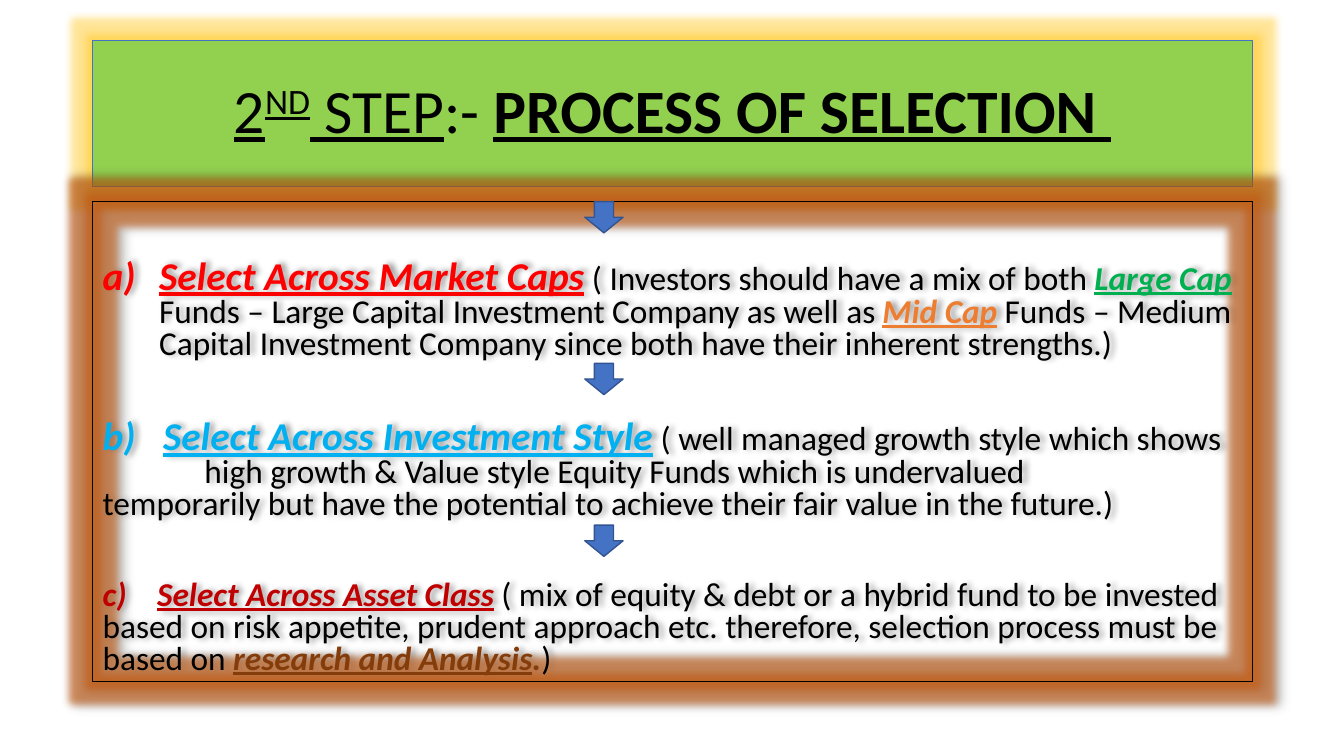
from lxml import etree
from pptx import Presentation
from pptx.dml.color import RGBColor
from pptx.enum.shapes import MSO_SHAPE
from pptx.enum.text import MSO_ANCHOR, PP_ALIGN
from pptx.oxml.ns import qn
from pptx.util import Inches, Pt

RECT, DOWN_ARROW = MSO_SHAPE.RECTANGLE, MSO_SHAPE.DOWN_ARROW
TOP, MIDDLE = MSO_ANCHOR.TOP, MSO_ANCHOR.MIDDLE
LEFT_ALIGN, CENTER = PP_ALIGN.LEFT, PP_ALIGN.CENTER

BLACK = RGBColor(0x00, 0x00, 0x00)
LIME = RGBColor(0x92, 0xD0, 0x50)
BLUE = RGBColor(0x44, 0x72, 0xC4)
NAVY = RGBColor(0x32, 0x54, 0x91)
RED = RGBColor(0xFF, 0x00, 0x00)
GREEN = RGBColor(0x00, 0xB0, 0x50)
ORANGE = RGBColor(0xED, 0x7D, 0x31)
SKY = RGBColor(0x00, 0xB0, 0xF0)
CRIMSON = RGBColor(0xC0, 0x00, 0x00)
BROWN = RGBColor(0x84, 0x3C, 0x0B)
GOLD_GLOW = RGBColor(0xFF, 0xC0, 0x00)
RUST_GLOW = RGBColor(0xC5, 0x5A, 0x11)

FONT = "Calibri"
LARGE, NORMAL = 28.1, 23.8

STEPS = [
    [("Select Across Market Caps", LARGE, RED, True),
     (" ( Investors should have a mix of both ", NORMAL, BLACK, False),
     ("Large Cap", NORMAL, GREEN, True),
     (" Funds – Large Capital Investment Company as well as ", NORMAL, BLACK, False),
     ("Mid Cap", NORMAL, ORANGE, True),
     (" Funds – Medium Capital Investment Company since both have their "
      "inherent strengths.)", NORMAL, BLACK, False)],
    [("b)\t", LARGE, SKY, False),
     ("Select Across Investment Style", LARGE, SKY, True),
     (" ( well managed growth style which shows\v\t\thigh growth & Value style "
      "Equity Funds which is undervalued\vtemporarily but have the potential to "
      "achieve their fair value in the future.)", NORMAL, BLACK, False)],
    [("c)\t", NORMAL, CRIMSON, False),
     ("Select Across Asset Class", NORMAL, CRIMSON, True),
     (" ( mix of equity & debt or a hybrid fund to be invested based on risk "
      "appetite, prudent approach etc. therefore, selection process must be "
      "based on ", NORMAL, BLACK, False),
     ("research and Analysis", NORMAL, BROWN, True),
     (".", NORMAL, BROWN, False),
     (")", NORMAL, BLACK, False)],
]
TAB_STOPS = [[], [0.6, 1.01], [0.54]]


def add_effect(effects, tag, color, alpha, **attrs):
    effect = etree.SubElement(effects, qn(tag), {k: str(v) for k, v in attrs.items()})
    clr = etree.SubElement(effect, qn("a:srgbClr"), val=str(color))
    etree.SubElement(clr, qn("a:alpha"), val=str(alpha * 1000))


def add_panel(slide, box, shape, fill, line, width):
    s = slide.shapes.add_shape(shape, *[Inches(v) for v in box])
    if fill is None:
        s.fill.background()
    else:
        s.fill.solid()
        s.fill.fore_color.rgb = fill
    s.line.color.rgb = line
    s.line.width = Pt(width)
    s.shadow.inherit = False
    return s, s._element.spPr.find(qn("a:effectLst"))


def add_run(p, text, size, color, underline):
    start = len(p.runs)
    for i, part in enumerate(text.split("\v")):
        if i:
            p.add_line_break()
        p.add_run().text = part
    for r in p.runs[start:]:
        r.font.name = FONT
        r.font.size = Pt(size)
        r.font.color.rgb = color
        r.font.underline = underline
    return p.runs[start:]


def add_title(slide, box):
    s, effects = add_panel(slide, box, RECT, LIME, BLUE, 0.75)
    add_effect(effects, "a:glow", GOLD_GLOW, 40, rad=Pt(11))
    tf = s.text_frame
    tf.word_wrap = True
    tf.vertical_anchor = MIDDLE
    p = tf.paragraphs[0]
    p.alignment = CENTER
    p.line_spacing = 0.9
    for text, underline, bold in [("2", True, False), ("ND", True, False),
                                  (" STEP", True, False), (":- ", False, False),
                                  ("PROCESS OF SELECTION ", True, True)]:
        r = add_run(p, text, 44, BLACK, underline)[0]
        r.font.bold = bold
        if text == "ND":
            r._r.get_or_add_rPr().set("baseline", "30000")


def set_list_format(p, stops):
    pPr = p._p.get_or_add_pPr()
    if stops:
        tabs = etree.SubElement(pPr, qn("a:tabLst"))
        for stop in stops:
            etree.SubElement(tabs, qn("a:tab"), pos=str(Inches(stop)), algn="l")
    else:
        pPr.set("marL", str(Inches(0.56)))
        pPr.set("indent", str(Inches(-0.56)))
        etree.SubElement(pPr, qn("a:buAutoNum"), type="alphaLcParenR")


def add_steps(slide, box):
    s, effects = add_panel(slide, box, RECT, None, BLACK, 0.75)
    add_effect(effects, "a:glow", RUST_GLOW, 60, rad=Pt(11))
    add_effect(effects, "a:outerShdw", BLACK, 40, blurRad=Pt(4), dist=Pt(3), dir=0)
    tf = s.text_frame
    tf.word_wrap = True
    tf.vertical_anchor = TOP
    tf.margin_top = Inches(0.58)
    tf.margin_bottom = 0
    for i, (runs, stops) in enumerate(zip(STEPS, TAB_STOPS)):
        p = tf.add_paragraph() if i else tf.paragraphs[0]
        p.alignment = LEFT_ALIGN
        p.line_spacing = 0.8
        p.space_before = Pt(42 if i else 0)
        set_list_format(p, stops)
        for text, size, color, underline in runs:
            for r in add_run(p, text, size, color, underline):
                r.font.bold = r.font.italic = color != BLACK
    left, top = box[:2]
    for i in range(len(STEPS)):
        add_panel(slide, (left + 4.88, top + 1.605 * i, 0.38, 0.31),
                  DOWN_ARROW, BLUE, NAVY, 1)


def main():
    prs = Presentation()
    prs.slide_width, prs.slide_height = Inches(13.33), Inches(7.5)
    slide = prs.slides.add_slide(prs.slide_layouts[6])
    add_title(slide, (0.92, 0.4, 11.5, 1.45))
    add_steps(slide, (0.92, 2, 11.5, 4.76))
    prs.save("out.pptx")


if __name__ == "__main__":
    main()
